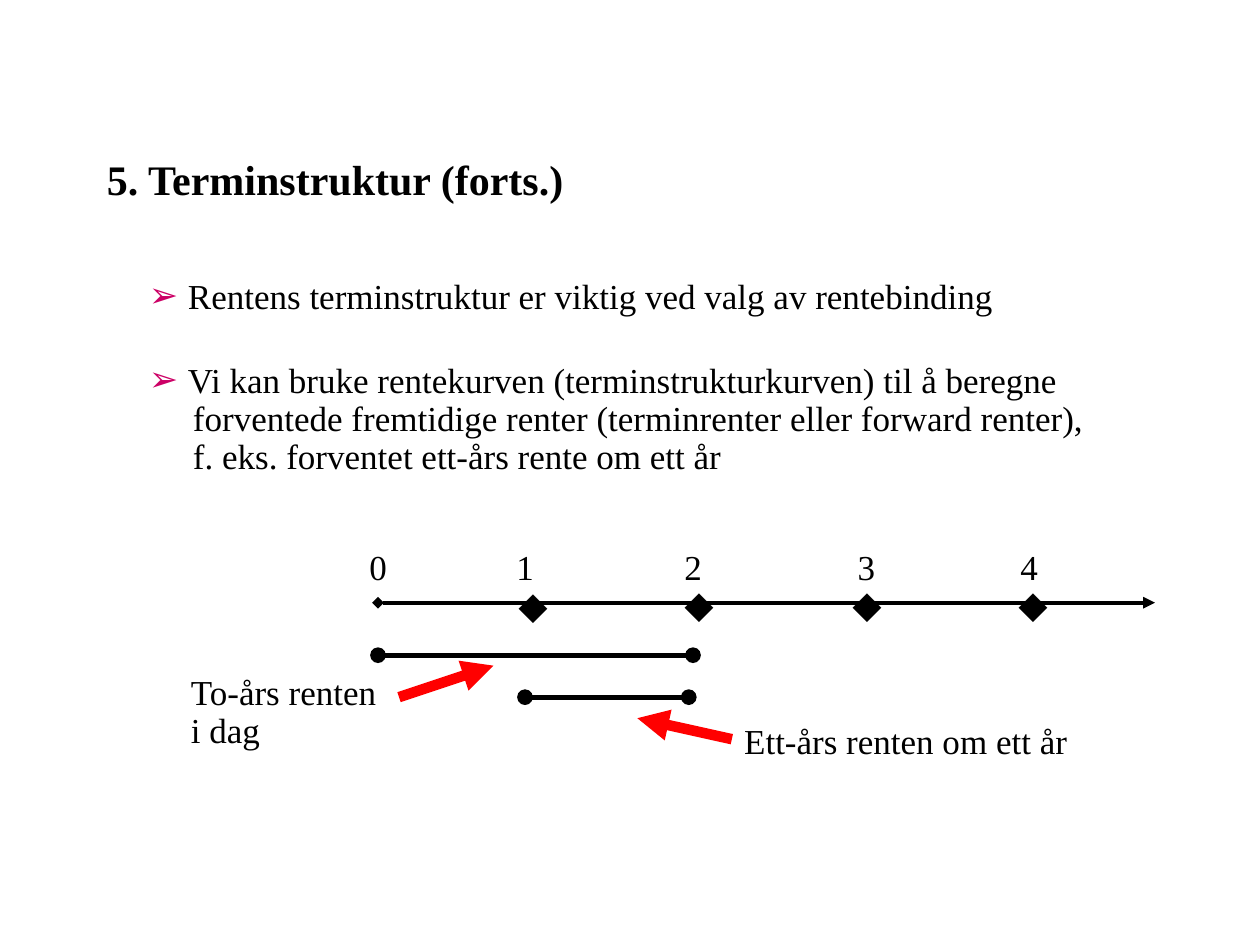
from lxml.etree import SubElement
from pptx import Presentation
from pptx.dml.color import RGBColor
from pptx.enum.shapes import MSO_CONNECTOR as Connector
from pptx.oxml.ns import qn
from pptx.util import Inches, Pt

SLIDE_WIDTH, SLIDE_HEIGHT = Inches(10), Inches(7.5)
COLUMNS, ROWS = 120, 90
COLORS = {"ink": "000000", "bullet": "CC0066", "pointer": "FF0000"}
SERIF, SANS = "Times New Roman", "Arial"


def col(count):
    return round(SLIDE_WIDTH * count / COLUMNS)


def row(count):
    return round(SLIDE_HEIGHT * count / ROWS)


def add_text(slide, left, top, width, height, lines, size=20, font=SERIF,
             bold=False, spacing=None, gap=0):
    """Place lines on the grid; gap is the space in points between them."""
    box = slide.shapes.add_textbox(col(left), row(top), col(width), row(height))
    frame = box.text_frame
    frame.word_wrap = True
    frame.text = "\n".join(lines)
    for index, paragraph in enumerate(frame.paragraphs):
        if spacing:
            paragraph.line_spacing = spacing
        if index and gap:
            paragraph.space_before = Pt(gap)
        for run in paragraph.runs:
            run.font.size = Pt(size)
            run.font.name = font
            run.font.bold = bold
            run.font.color.rgb = RGBColor.from_string(COLORS["ink"])
    return frame


def set_indent(paragraph, margin, first=0):
    props = paragraph._p.get_or_add_pPr()
    props.set("marL", str(Inches(margin)))
    props.set("indent", str(Inches(first)))
    return props


def add_point(slide, top, height, lines):
    """Bullet the first line and indent the lines that continue it."""
    frame = add_text(slide, 13, top, 97, height, lines, spacing=0.9)
    opening, *continued = frame.paragraphs
    props = set_indent(opening, 0.31, -0.31)
    color = SubElement(props, qn("a:buClr"))
    SubElement(color, qn("a:srgbClr"), val=COLORS["bullet"])
    SubElement(props, qn("a:buFont"), typeface=SANS)
    SubElement(props, qn("a:buChar"), char="➢")
    for paragraph in continued:
        set_indent(paragraph, 0.35)


def add_line(slide, start, end, weight, color="ink", head=None, tail=None):
    line = slide.shapes.add_connector(
        Connector.STRAIGHT, col(start[0]), row(start[1]), col(end[0]), row(end[1]))
    line.line.width = Pt(weight)
    line.line.color.rgb = RGBColor.from_string(COLORS[color])
    outline = line.line._get_or_add_ln()
    for tag, kind in (("a:headEnd", head), ("a:tailEnd", tail)):
        if kind:
            SubElement(outline, qn(tag), type=kind)
    SubElement(line._element.spPr, qn("a:effectLst"))


def add_timeline(slide):
    add_line(slide, (36, 57.4), (110, 57.4), 2.25, head="diamond", tail="triangle")
    for year, left in enumerate((34, 48, 64, 80.5, 96)):
        add_text(slide, left, 51.4, 6, 5.2, [str(year)])
    for left, top in ((48.2, 54.5), (64, 54.4), (80, 54.4), (95.8, 54.4)):
        add_text(slide, left, top, 4, 6, ["⬥"], size=24, font=SANS)


def add_periods(slide):
    for start, end, level in ((36, 66, 62.4), (50, 65.6, 66.4)):
        add_line(slide, (start, level), (end, level), 3, head="oval", tail="oval")
    add_text(slide, 17, 65, 21, 7.2, ["To-års renten", "i dag"], spacing=0.5, gap=10)
    add_text(slide, 69.7, 68.4, 40.3, 4.8, ["Ett-års renten om ett år"], spacing=0.9)
    for start, end in (((38, 66.4), (47, 63.4)), ((69.7, 70.4), (60.7, 68.4))):
        add_line(slide, start, end, 6, color="pointer", tail="triangle")


def main():
    deck = Presentation()
    deck.slide_width, deck.slide_height = SLIDE_WIDTH, SLIDE_HEIGHT
    slide = deck.slides.add_slide(deck.slide_layouts[6])

    add_text(slide, 9, 14, 97, 7, ["5. Terminstruktur (forts.)"], size=24, bold=True)
    add_point(slide, 26, 4.8, [
        "Rentens terminstruktur er viktig ved valg av rentebinding"])
    add_point(slide, 34, 12, [
        "Vi kan bruke rentekurven (terminstrukturkurven) til å beregne",
        "forventede fremtidige renter (terminrenter eller forward renter),",
        "f. eks. forventet ett-års rente om ett år"])
    add_timeline(slide)
    add_periods(slide)

    deck.save("out.pptx")


if __name__ == "__main__":
    main()
